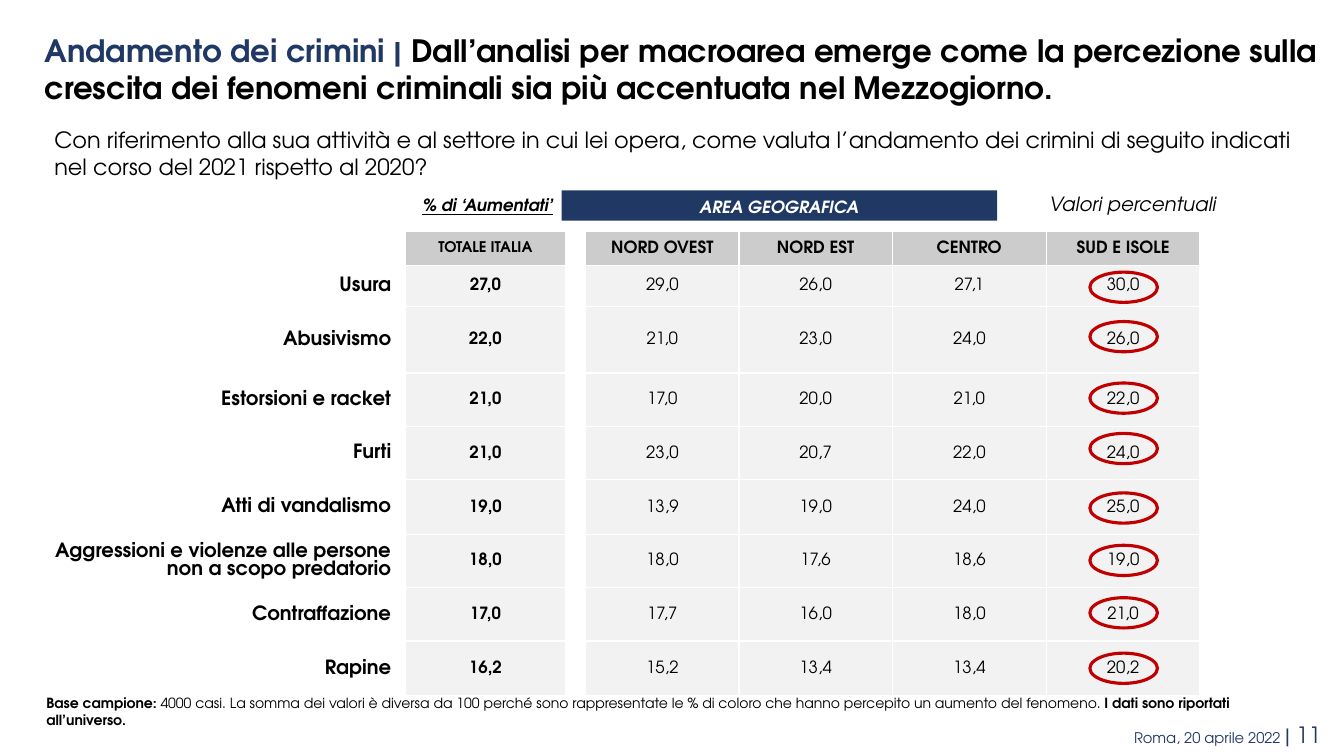
from lxml import etree
from pptx import Presentation
from pptx import util as u
from pptx.dml.color import RGBColor
from pptx.enum import shapes, text
from pptx.oxml import ns

PX = 9144
FONT = "TeX Gyre Adventor"
NAVY = RGBColor(0x20, 0x38, 0x64)
RED = RGBColor(0xC0, 0x00, 0x00)
BLACK = RGBColor(0x00, 0x00, 0x00)
WHITE = RGBColor(0xFF, 0xFF, 0xFF)
HEAD = RGBColor(0xCC, 0xCC, 0xCC)
BODY = RGBColor(0xF2, 0xF2, 0xF2)
LEFT, CENTER, RIGHT = text.PP_ALIGN.LEFT, text.PP_ALIGN.CENTER, text.PP_ALIGN.RIGHT

COLUMNS = [345, 13, 159, 7, 13, 152, 152, 153, 152, 13]
ROWS = [33, 41, 66] + [53, 53, 54] * 2
DATA_COLUMNS = [0, 2, 5, 6, 7, 8]
DATA = [
    ["", "TOTALE ITALIA", "NORD OVEST", "NORD EST", "CENTRO", "SUD E ISOLE"],
    ["Usura", "27,0", "29,0", "26,0", "27,1", "30,0"],
    ["Abusivismo", "22,0", "21,0", "23,0", "24,0", "26,0"],
    ["Estorsioni e racket", "21,0", "17,0", "20,0", "21,0", "22,0"],
    ["Furti", "21,0", "23,0", "20,7", "22,0", "24,0"],
    ["Atti di vandalismo", "19,0", "13,9", "19,0", "24,0", "25,0"],
    ["Aggressioni e violenze alle persone non a scopo predatorio",
     "18,0", "18,0", "17,6", "18,6", "19,0"],
    ["Contraffazione", "17,0", "17,7", "16,0", "18,0", "21,0"],
    ["Rapine", "16,2", "15,2", "13,4", "13,4", "20,2"],
]
RING_TOPS = [270, 319, 380, 430, 489, 541, 593, 648]


def px(*lengths):
    return [u.Emu(n * PX) for n in lengths]


def set_font(font, size, color=BLACK, bold=False, italic=False):
    font.name, font.size = FONT, u.Pt(size)
    font.bold, font.italic = bold, italic
    font.color.rgb = color


def add_text(s, box, content, size, align=LEFT, inset=(10, 5), **style):
    sp = s.shapes.add_textbox(*px(*box))
    tf = sp.text_frame
    tf.word_wrap = True
    tf.margin_left = tf.margin_right = u.Emu(inset[0] * PX)
    tf.margin_top = tf.margin_bottom = u.Emu(inset[1] * PX)
    p = tf.paragraphs[0]
    p.alignment = align
    set_font(p.font, size, **style)
    for item in [content] if isinstance(content, str) else content:
        r = p.add_run()
        if isinstance(item, str):
            r.text = item
        else:
            r.text, changes = item
            set_font(r.font, **{"size": size, **style, **changes})
    return p


def add_banner(s, box, label):
    sp = s.shapes.add_shape(shapes.MSO_SHAPE.RECTANGLE, *px(*box))
    sp.shadow.inherit = False
    sp.fill.solid()
    sp.fill.fore_color.rgb = NAVY
    sp.line.fill.background()
    tf = sp.text_frame
    tf.vertical_anchor = text.MSO_ANCHOR.MIDDLE
    p = tf.paragraphs[0]
    p.text = label
    p.alignment = CENTER
    p.line_spacing = 1.1
    set_font(p.font, 12, WHITE, True, True)


def add_ring(s, top):
    sp = s.shapes.add_shape(shapes.MSO_SHAPE.OVAL, *px(1081, top, 67, 30))
    sp.shadow.inherit = False
    sp.fill.background()
    sp.line.color.rgb = RED
    sp.line.width = u.Pt(2.25)


def set_borders(cell):
    tc_pr = cell._tc.get_or_add_tcPr()
    for i, side in enumerate(("lnL", "lnR", "lnT", "lnB")):
        ln = etree.Element(ns.qn("a:" + side), w=str(u.Pt(1)))
        fill = etree.SubElement(ln, ns.qn("a:solidFill"))
        etree.SubElement(fill, ns.qn("a:srgbClr"), val=str(WHITE))
        tc_pr.insert(i, ln)


def fill_cell(cell, label, row, col):
    cell.fill.solid()
    cell.fill.fore_color.rgb = WHITE if col == 0 or not label else BODY if row else HEAD
    set_borders(cell)
    cell.margin_left = cell.margin_right = cell.margin_top = u.Emu(PX)
    cell.margin_bottom = 0
    cell.vertical_anchor = text.MSO_ANCHOR.MIDDLE
    p = cell.text_frame.paragraphs[0]
    p.text = label
    p.alignment = CENTER if col else RIGHT
    size = 14 if col == 0 else 10.5 if (row, col) == (0, 2) else 12
    set_font(p.font, size, bold=row == 0 or col <= 2)


def add_crime_table(s):
    frame = s.shapes.add_table(len(ROWS), len(COLUMNS),
                               *px(44, 230, sum(COLUMNS), sum(ROWS)))
    table = frame.table
    table.first_row = table.horz_banding = False
    for column, width in zip(table.columns, px(*COLUMNS)):
        column.width = width
    for i, (row, height) in enumerate(zip(table.rows, px(*ROWS))):
        row.height = height
        labels = dict(zip(DATA_COLUMNS, DATA[i]))
        for j, cell in enumerate(row.cells):
            fill_cell(cell, labels.get(j, ""), i, j)


def main():
    prs = Presentation()
    prs.slide_width, prs.slide_height = px(1333, 750)
    s = prs.slides.add_slide(prs.slide_layouts[6])
    add_text(s, (627, 711, 693, 37),
             ["Roma, 20 aprile 2022 ", ("| 11", {"size": 16})],
             10.5, RIGHT, color=NAVY)
    add_text(s, (1031, 186, 233, 34), "Valori percentuali", 14, italic=True)
    add_text(s, (38, 684, 1248, 44), [
        ("Base campione:", {"bold": True}),
        " 4000 casi. La somma dei valori è diversa da 100 perché sono rappresentate "
        "le % di coloro che hanno percepito un aumento del fenomeno. ",
        ("I dati sono riportati all’universo.", {"bold": True}),
    ], 10, inset=(8, 5))
    add_text(s, (44, 120, 1267, 64),
             "Con riferimento alla sua attività e al settore in cui lei opera, come valuta "
             "l’andamento dei crimini di seguito indicati nel corso del 2021 rispetto al 2020?",
             16)
    add_text(s, (37, 27, 1291, 82), [
        ("Andamento dei crimini | ", {"color": NAVY}),
        "Dall’analisi per macroarea emerge come la percezione sulla crescita "
        "dei fenomeni criminali sia più accentuata nel Mezzogiorno.",
    ], 22, inset=(7, 4), bold=True)
    add_banner(s, (557, 189, 432, 30), "AREA GEOGRAFICA")
    add_crime_table(s)
    p = add_text(s, (409, 188, 233, 30), "% di ‘Aumentati’", 12, bold=True, italic=True)
    p.font.underline = True
    for top in RING_TOPS:
        add_ring(s, top)
    prs.save("out.pptx")


if __name__ == "__main__":
    main()
